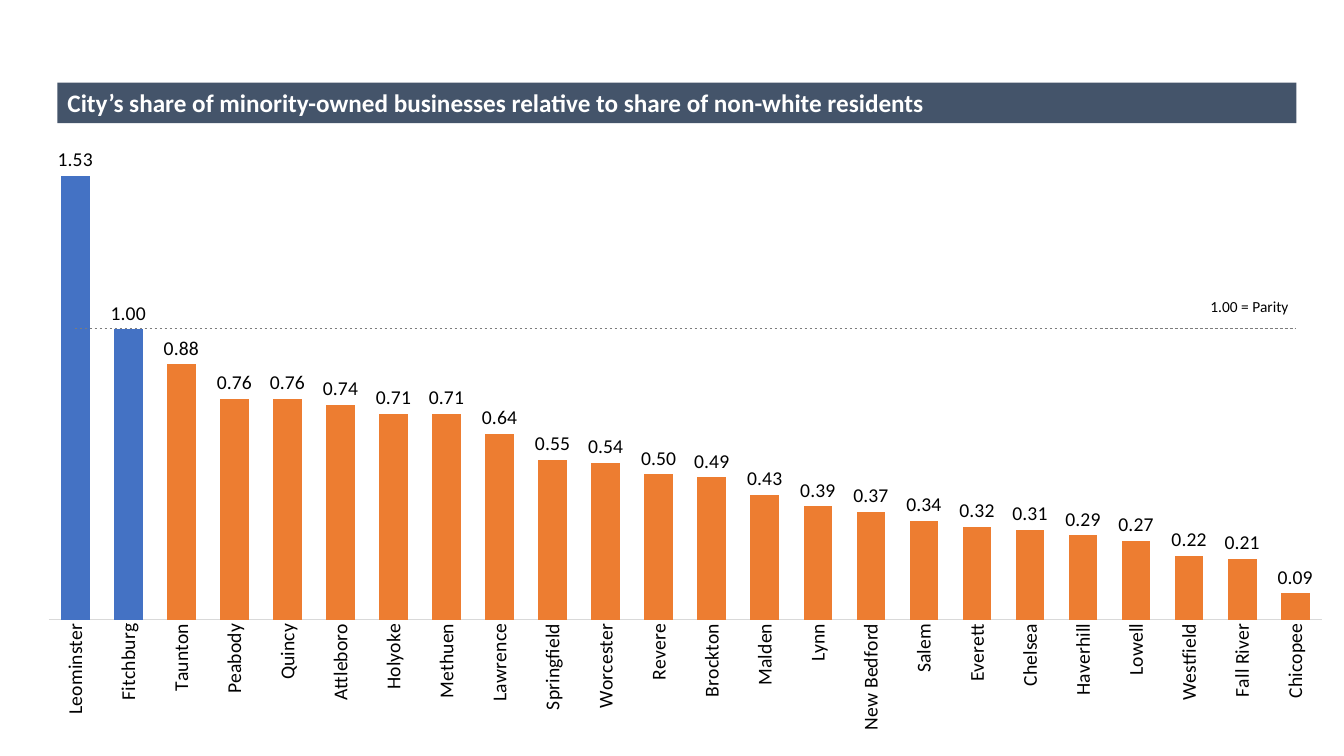
from pptx import Presentation
from pptx import util as u
from pptx.chart.data import CategoryChartData
from pptx.dml.color import RGBColor
from pptx.enum import chart as ch, dml, shapes, text
from pptx.oxml import parse_xml
from pptx.oxml.ns import nsdecls, qn

Pt = u.Pt
FONT = "Calibri"
BLACK = RGBColor(0, 0, 0)
WHITE = RGBColor(255, 255, 255)
SLATE = RGBColor(0x44, 0x54, 0x6A)
BLUE = RGBColor(0x44, 0x72, 0xC4)
ORANGE = RGBColor(0xED, 0x7D, 0x31)
PALE = RGBColor(0xD9, 0xD9, 0xD9)
GREY = RGBColor(0x7C, 0x7C, 0x7C)

PLOT = {"x": 0.015, "y": 0.075, "w": 0.976, "h": 0.753}
CITIES = {
    "Leominster": 1.53, "Fitchburg": 1.00, "Taunton": 0.88, "Peabody": 0.76,
    "Quincy": 0.76, "Attleboro": 0.74, "Holyoke": 0.71, "Methuen": 0.71,
    "Lawrence": 0.64, "Springfield": 0.55, "Worcester": 0.54, "Revere": 0.50,
    "Brockton": 0.49, "Malden": 0.43, "Lynn": 0.39, "New Bedford": 0.37,
    "Salem": 0.34, "Everett": 0.32, "Chelsea": 0.31, "Haverhill": 0.29,
    "Lowell": 0.27, "Westfield": 0.22, "Fall River": 0.21, "Chicopee": 0.09,
}


def style(font, size, color=BLACK, bold=False):
    font.name = FONT
    font.size = Pt(size)
    font.color.rgb = color
    font.bold = bold


def paint(form, color):
    form.fill.solid()
    form.fill.fore_color.rgb = color


def place(shape, left, top, width, height):
    shape.left, shape.top = Pt(left), Pt(top)
    shape.width, shape.height = Pt(width), Pt(height)


def set_plot(chart):
    area = chart.element.find(".//" + qn("c:plotArea"))
    for old in area.findall(qn("c:layout")):
        area.remove(old)
    sides = "".join(f'<c:{k} val="{v}"/>' for k, v in PLOT.items())
    area.insert(0, parse_xml(
        f'<c:layout {nsdecls("c")}><c:manualLayout><c:layoutTarget val="inner"/>'
        f'<c:xMode val="edge"/><c:yMode val="edge"/>{sides}'
        '</c:manualLayout></c:layout>'))


def set_axes(chart):
    cat = chart.category_axis
    cat.major_tick_mark = ch.XL_TICK_MARK.NONE
    cat.format.line.color.rgb = PALE
    cat.format.line.width = Pt(0.75)
    style(cat.tick_labels.font, 14)
    body = chart.element.xpath(".//c:catAx/c:txPr/a:bodyPr")[0]
    body.set("rot", "-5400000")
    body.set("vert", "horz")
    val = chart.value_axis
    val.minimum_scale, val.maximum_scale = 0, 1.8
    val.has_major_gridlines = False
    val.visible = False


def add_bars(slide):
    data = CategoryChartData(number_format="0.00")
    data.categories = list(CITIES)
    data.add_series("Series 1", list(CITIES.values()))
    chart = slide.shapes.add_chart(
        ch.XL_CHART_TYPE.COLUMN_CLUSTERED,
        Pt(20.9), Pt(32.4), Pt(931.7), Pt(495.4), data).chart
    chart.has_legend = False
    chart.has_title = False
    style(chart.font, 10)
    set_plot(chart)
    set_axes(chart)
    plot = chart.plots[0]
    plot.gap_width, plot.overlap = 85, -27
    plot.vary_by_categories = False
    bars = plot.series[0]
    bars.invert_if_negative = False
    paint(bars.format, ORANGE)
    for i, share in enumerate(CITIES.values()):
        if share >= 1:
            paint(bars.points[i].format, BLUE)
    plot.has_data_labels = True
    tags = plot.data_labels
    tags.show_value = True
    tags.number_format = "0.00"
    tags.number_format_is_linked = False
    tags.position = ch.XL_LABEL_POSITION.OUTSIDE_END
    style(tags.font, 14)


def add_title(slide, words):
    title = slide.shapes.title
    place(title, 41, 59, 885, 29)
    paint(title, SLATE)
    frame = title.text_frame
    frame.text = words
    frame.word_wrap = True
    frame.auto_size = text.MSO_AUTO_SIZE.NONE
    frame.vertical_anchor = text.MSO_ANCHOR.MIDDLE
    para = frame.paragraphs[0]
    para.alignment = text.PP_ALIGN.LEFT
    para.line_spacing = 1.0
    style(para.runs[0].font, 18, WHITE, True)
    slide.shapes.element.append(title.element)


def add_rule(slide, left, right, top):
    rule = slide.shapes.add_connector(
        shapes.MSO_CONNECTOR.STRAIGHT, Pt(left), Pt(top), Pt(right), Pt(top))
    rule.line.color.rgb = GREY
    rule.line.width = Pt(0.5)
    rule.line.dash_style = dml.MSO_LINE.DASH
    rule.element.spPr.append(parse_xml(f'<a:effectLst {nsdecls("a")}/>'))


def add_note(slide, words, left, top, width, height):
    box = slide.shapes.add_textbox(Pt(left), Pt(top), Pt(width), Pt(height))
    frame = box.text_frame
    frame.word_wrap = False
    frame.text = words
    style(frame.paragraphs[0].runs[0].font, 11)


def main():
    deck = Presentation()
    deck.slide_width, deck.slide_height = Pt(960), Pt(540)
    slide = deck.slides.add_slide(deck.slide_layouts.get_by_name("Title Only"))
    add_bars(slide)
    add_title(slide, "City’s share of minority-owned businesses "
                     "relative to share of non-white residents")
    add_rule(slide, 53.3, 925.9, 234.7)
    add_note(slide, "1.00 = Parity", 857.5, 208.8, 72, 72)
    deck.save("out.pptx")


if __name__ == "__main__":
    main()
